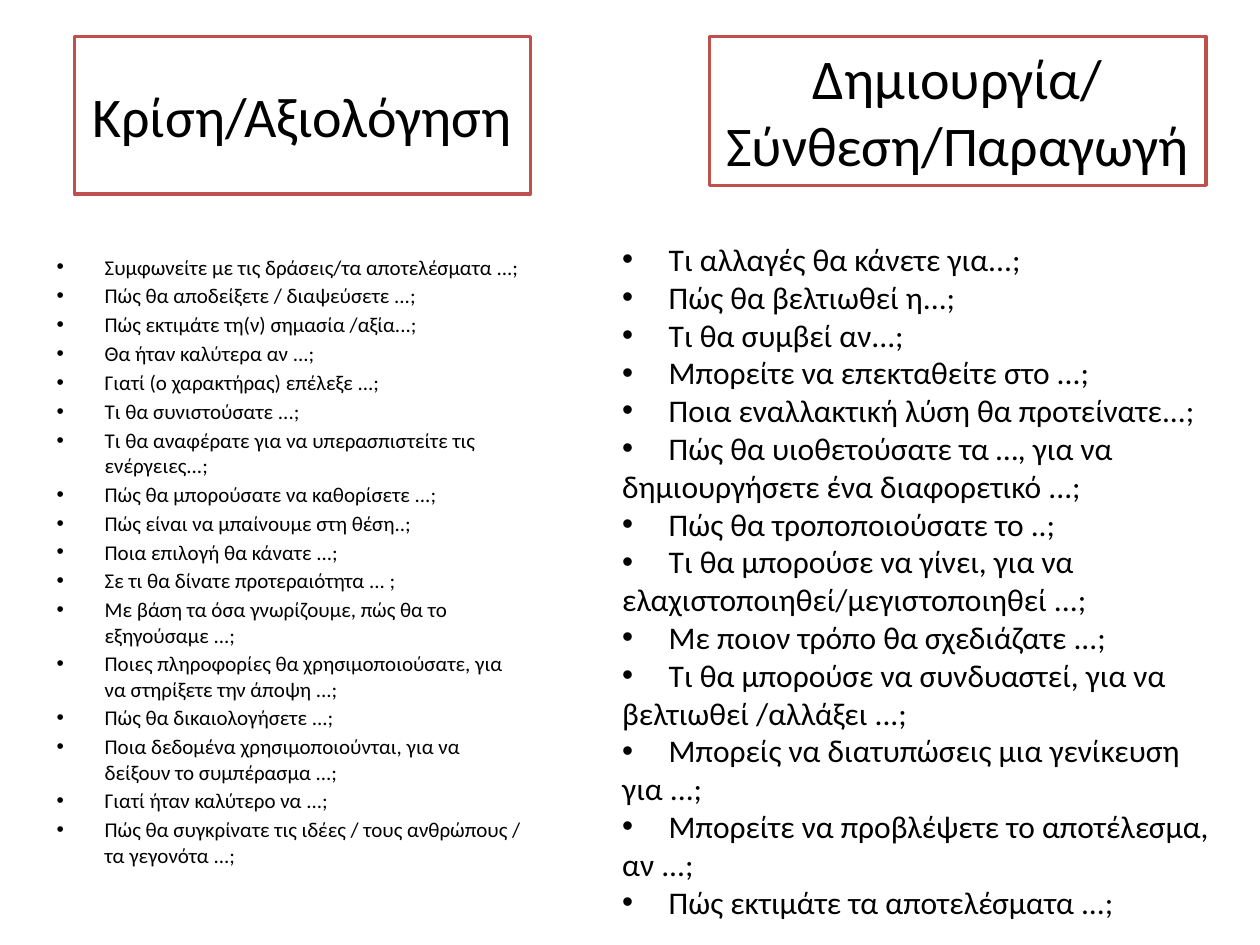
from dataclasses import dataclass

from lxml import etree
from pptx import Presentation
from pptx.dml.color import RGBColor
from pptx.enum import shapes, text
from pptx.oxml import ns
from pptx.util import Pt


@dataclass(frozen=True)
class Theme:
    face: str = "Calibri"
    ink: RGBColor = RGBColor(0, 0, 0)
    paper: RGBColor = RGBColor(255, 255, 255)
    edge: RGBColor = RGBColor(0xC0, 0x50, 0x4D)
    head: int = 32
    small: int = 12
    large: int = 18


THEME = Theme()

JUDGE = [
    "Συμφωνείτε με τις δράσεις/τα αποτελέσματα ...;",
    "Πώς θα αποδείξετε / διαψεύσετε ...;",
    "Πώς εκτιμάτε τη(ν) σημασία /αξία...;",
    "Θα ήταν καλύτερα αν ...;",
    "Γιατί (ο χαρακτήρας) επέλεξε ...;",
    "Τι θα συνιστούσατε ...;",
    "Τι θα αναφέρατε για να υπερασπιστείτε τις ενέργειες...;",
    "Πώς θα μπορούσατε να καθορίσετε ...;",
    "Πώς είναι να μπαίνουμε στη θέση..;",
    "Ποια επιλογή θα κάνατε ...;",
    "Σε τι θα δίνατε προτεραιότητα ... ;",
    "Με βάση τα όσα γνωρίζουμε, πώς θα το εξηγούσαμε ...;",
    "Ποιες πληροφορίες θα χρησιμοποιούσατε, για να στηρίξετε την άποψη ...;",
    "Πώς θα δικαιολογήσετε ...;",
    "Ποια δεδομένα χρησιμοποιούνται, για να δείξουν το συμπέρασμα ...;",
    "Γιατί ήταν καλύτερο να ...;",
    "Πώς θα συγκρίνατε τις ιδέες / τους ανθρώπους / τα γεγονότα ...;",
]

CREATE = [
    "Τι αλλαγές θα κάνετε για...;",
    "Πώς θα βελτιωθεί η...;",
    "Τι θα συμβεί αν...;",
    "Μπορείτε να επεκταθείτε στο ...;",
    "Ποια εναλλακτική λύση θα προτείνατε...;",
    "Πώς θα υιοθετούσατε τα …, για να δημιουργήσετε ένα διαφορετικό ...;",
    "Πώς θα τροποποιούσατε το ..;",
    "Τι θα μπορούσε να γίνει, για να ελαχιστοποιηθεί/μεγιστοποιηθεί ...;",
    "Με ποιον τρόπο θα σχεδιάζατε ...;",
    "Τι θα μπορούσε να συνδυαστεί, για να βελτιωθεί /αλλάξει ...;",
    "Μπορείς να διατυπώσεις μια γενίκευση για ...;",
    "Μπορείτε να προβλέψετε το αποτέλεσμα, αν ...;",
    "Πώς εκτιμάτε τα αποτελέσματα ...;",
]


def mark(para, hang, tab):
    props = para._p.get_or_add_pPr()
    props.set("marL", str(Pt(hang)))
    props.set("indent", str(-Pt(hang)))
    font = etree.SubElement(props, ns.qn("a:buFont"))
    font.set("typeface", "Arial")
    etree.SubElement(props, ns.qn("a:buChar")).set("char", "•")
    if tab:
        stops = etree.SubElement(props, ns.qn("a:tabLst"))
        stop = etree.SubElement(stops, ns.qn("a:tab"))
        stop.set("pos", str(Pt(tab)))
        stop.set("algn", "l")


def write(frame, lines, size, align=text.PP_ALIGN.LEFT,
          anchor=text.MSO_ANCHOR.TOP, bullet=False, hang=0, tab=0, gap=0):
    frame.word_wrap = True
    frame.auto_size = text.MSO_AUTO_SIZE.NONE
    frame.vertical_anchor = anchor
    for num, line in enumerate(lines):
        para = frame.add_paragraph() if num else frame.paragraphs[0]
        if bullet:
            mark(para, hang, tab)
        para.alignment = align
        para.space_before = Pt(gap if num else 0)
        run = para.add_run()
        run.text = "\t" + line if tab else line
        run.font.name = THEME.face
        run.font.size = Pt(size)
        run.font.color.rgb = THEME.ink


def place(shape, box):
    shape.left, shape.top, shape.width, shape.height = map(Pt, box)


def frame_head(shape, lines):
    shape.fill.solid()
    shape.fill.fore_color.rgb = THEME.paper
    shape.line.color.rgb = THEME.edge
    shape.line.width = Pt(2)
    write(shape.text_frame, lines, THEME.head,
          align=text.PP_ALIGN.CENTER, anchor=text.MSO_ANCHOR.MIDDLE)


def judge_side(slide, box):
    left, top, width, height = box
    title = slide.shapes.title
    place(title, (left + 17.3, top, 260.6, 90))
    frame_head(title, ["Κρίση/Αξιολόγηση"])
    body = slide.placeholders[1]
    place(body, (left, top + 120.7, width, height - 120.7))
    write(body.text_frame, JUDGE, THEME.small, bullet=True, hang=27.4, gap=2.1)


def create_side(slide, box):
    left, top, width, height = box
    head = slide.shapes.add_shape(
        shapes.MSO_SHAPE.RECTANGLE,
        Pt(left + 56.9), Pt(top), Pt(283.7), Pt(85))
    head.shadow.inherit = False
    frame_head(head, ["Δημιουργία/", "Σύνθεση/Παραγωγή"])
    body = slide.shapes.add_textbox(
        Pt(left), Pt(top + 112.7), Pt(width), Pt(height - 112.7))
    write(body.text_frame, CREATE, THEME.large, bullet=True, tab=26.6)


def main():
    deck = Presentation()
    deck.slide_width, deck.slide_height = Pt(720), Pt(540)
    slide = deck.slides.add_slide(deck.slide_layouts[1])
    judge_side(slide, (25.2, 20.9, 283.7, 492.5))
    create_side(slide, (348.5, 20.9, 357.1, 516))
    deck.save("out.pptx")


if __name__ == "__main__":
    main()
